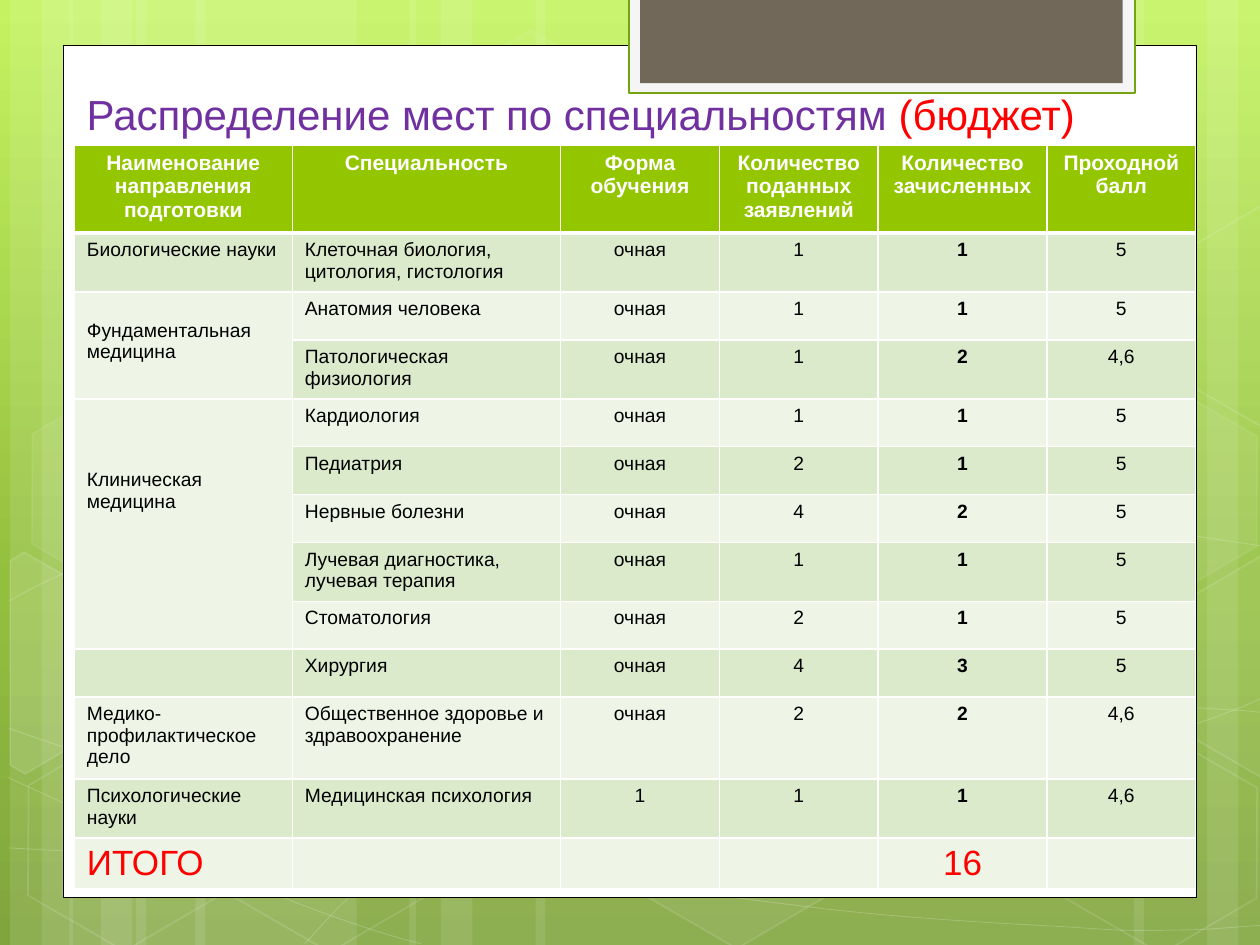
from copy import deepcopy
from dataclasses import dataclass
from math import cos, radians, sin
from typing import NamedTuple, Optional

from lxml.etree import SubElement
from pptx import Presentation
from pptx.dml.color import RGBColor
from pptx.enum.shapes import MSO_SHAPE
from pptx.enum.text import MSO_ANCHOR, PP_ALIGN
from pptx.oxml.ns import qn
from pptx.util import Inches, Pt


@dataclass(frozen=True)
class Theme:
    font: str = "Arial"
    white: str = "FFFFFF"
    black: str = "000000"
    red: str = "FF0000"
    purple: str = "7030A0"
    header: str = "94C600"
    bands: tuple = ("EEF5E7", "DCEACC")
    tab_light: str = "F5F5F5"
    tab_line: str = "74A510"
    tab_dark: str = "71685A"
    backdrop: tuple = ((0, "C3F35F"), (0.62, "93BF3F"), (1, "81A53E"))
    title_size: int = 24
    header_size: int = 12
    body_size: int = 11
    total_size: int = 20


class Style(NamedTuple):
    fill: Optional[str] = None
    fill_alpha: int = 100
    line: Optional[str] = None
    width: float = 1
    line_alpha: int = 100


class Hexagon(NamedTuple):
    x: float
    y: float
    fill_alpha: int
    line_alpha: int


class CutHexagon(NamedTuple):
    """A hexagon cut off by the slide edge, as it stands on the slide."""
    cx: float
    cy: float
    points: list
    fill_alpha: int


class Row(NamedTuple):
    field: str
    specialty: str
    form: str
    applied: str
    enrolled: str
    score: str
    height: float
    span: int = 1
    top: float = 0.05


T = Theme()
TILT = 30
STRIPES = [(1.08, 1.75), (0.08, 0.5), (0.33, 0.83), (1.55, 1.75), (0.55, 0.5), (0.8, 0.83),
           (7.33, 1.75), (9.58, 0.5), (9, 0.83), (4.25, 3.08), (3.25, 0.5), (3.5, 0.83)]
# Each curve is a start point followed by three points per Bezier segment.
CURVES = [
    [(0.07, 6.73), (0.61, 6.76), (1.15, 6.79), (1.9, 6.78), (2.65, 6.77), (3.58, 6.75), (4.58, 6.65),
     (5.58, 6.55), (7, 6.36), (7.92, 6.17), (8.83, 5.98), (9.77, 5.68), (10.07, 5.51)],
    [(0.07, 4.77), (0.36, 4.61), (0.65, 4.46), (1.21, 4.31), (1.78, 4.16), (2.59, 3.94), (3.47, 3.87),
     (4.36, 3.8), (5.44, 3.79), (6.54, 3.87), (7.64, 3.95), (9.47, 4.26), (10.07, 4.34)],
    [(0.06, 6.17), (1.27, 6.72), (2.47, 7.27), (3.34, 7.49)],
    [(0.07, 5.78), (0.38, 5.89), (0.7, 6), (1.28, 6.16), (1.86, 6.31), (2.73, 6.56), (3.57, 6.73),
     (4.4, 6.9), (5.45, 7.08), (6.28, 7.18), (7.11, 7.29), (8, 7.33), (8.53, 7.36),
     (9.05, 7.4), (9.19, 7.38), (9.45, 7.38), (9.71, 7.37), (9.89, 7.35), (10.07, 7.34)],
    [(2.42, 7.49), (2.6, 7.29), (2.78, 7.09), (3.02, 6.91), (3.26, 6.73), (3.6, 6.53), (3.88, 6.39),
     (4.16, 6.25), (4.33, 6.19), (4.7, 6.09), (5.06, 5.99), (5.73, 5.85), (6.08, 5.78),
     (6.44, 5.71), (6.49, 5.71), (6.8, 5.69), (7.11, 5.66), (7.6, 5.63), (7.94, 5.62),
     (8.29, 5.61), (8.86, 5.62), (8.86, 5.62), (8.86, 5.62), (9.53, 5.62), (9.53, 5.62),
     (9.71, 5.63), (9.88, 5.64), (9.97, 5.65), (10.06, 5.66), (10.03, 5.65), (10.06, 5.66)],
]
HEXAGONS = [Hexagon(3.34, 0.36, 4, 8), Hexagon(4.97, 5.89, 6, 12), Hexagon(0.11, 5.91, 0, 12),
            Hexagon(0.14, 3.12, 7, 8), Hexagon(1.74, 5.92, 0, 12), Hexagon(7.53, 4.53, 10, 12),
            Hexagon(8.34, 5.93, 0, 12), Hexagon(8.34, 3.14, 7, 8)]
CUT_HEXAGONS = [
    CutHexagon(0.36, 5.35, [(0.08, 4.45), (0.19, 4.38), (0.96, 4.82), (0.95, 5.7), (0.2, 6.14), (0.08, 6.07)], 10),
    CutHexagon(9.85, 5.2, [(9.26, 4.85), (10.01, 4.41), (10.09, 4.46), (10.09, 6.13), (10.02, 6.17), (9.26, 5.73)], 4),
    CutHexagon(9.85, 2.41, [(9.26, 2.07), (10.01, 1.63), (10.1, 1.68), (10.09, 3.35), (10.02, 3.39), (9.26, 2.95)], 0),
]
COLUMNS = [1.73, 2.13, 1.26, 1.26, 1.34, 1.18]
ENROLLED = 4
ROWS = [
    Row("Наименование направления подготовки", "Специальность", "Форма обучения",
        "Количество\nподанных заявлений", "Количество зачисленных", "Проходной балл", 0.69),
    Row("Биологические науки", "Клеточная биология, цитология, гистология", "очная", "1", "1", "5", 0.46),
    Row("Фундаментальная медицина", "Анатомия человека", "очная", "1", "1", "5", 0.38, 2, 0.22),
    Row("", "Патологическая физиология", "очная", "1", "2", "4,6", 0.46),
    Row("Клиническая медицина", "Кардиология", "очная", "1", "1", "5", 0.38, 5, 0.56),
    Row("", "Педиатрия", "очная", "2", "1", "5", 0.38),
    Row("", "Нервные болезни", "очная", "4", "2", "5", 0.38),
    Row("", "Лучевая диагностика, лучевая терапия", "очная", "1", "1", "5", 0.46),
    Row("", "Стоматология", "очная", "2", "1", "5", 0.38),
    Row("", "Хирургия", "очная", "4", "3", "5", 0.38),
    Row("Медико-профилактическое дело", "Общественное здоровье и здравоохранение", "очная", "2", "2", "4,6", 0.64),
    Row("Психологические науки", "Медицинская психология", "1", "1", "1", "4,6", 0.46),
    Row("ИТОГО", "", "", "", "16", "", 0.39),
]


def paint(sp, style: Style) -> None:
    sp.shadow.inherit = False
    for fill, color, alpha, tag in ((sp.fill, style.fill, style.fill_alpha, "a:solidFill"),
                                    (sp.line.fill, style.line, style.line_alpha, "a:ln/a:solidFill")):
        if not color or not alpha:
            fill.background()
            continue
        fill.solid()
        fill.fore_color.rgb = RGBColor.from_string(color)
        if alpha < 100:
            steps = "/".join(qn(t) for t in (tag + "/a:srgbClr").split("/"))
            SubElement(sp.element.spPr.find(steps), qn("a:alpha"), val=str(alpha * 1000))
    if style.line:
        sp.line.width = Pt(style.width)


def add_preset(s, kind, x: float, y: float, w: float, h: float, style: Style):
    sp = s.shapes.add_shape(kind, Inches(x), Inches(y), Inches(w), Inches(h))
    paint(sp, style)
    return sp


def add_outline(s, points: list, closed: bool, style: Style):
    start, *rest = [(Inches(x), Inches(y)) for x, y in points]
    builder = s.shapes.build_freeform(*start)
    builder.add_line_segments(rest, close=closed)
    sp = builder.convert_to_shape()
    paint(sp, style)
    return sp


def bend(sp) -> None:
    """Join each three line segments into one Bezier segment."""
    lines = list(sp.element.iter(qn("a:lnTo")))
    for i in range(0, len(lines), 3):
        curve = SubElement(lines[i].getparent(), qn("a:cubicBezTo"))
        for line in lines[i:i + 3]:
            curve.append(line[0])
            line.getparent().remove(line)


def untilt(cut: CutHexagon) -> list:
    """Turn the points back, so that the shape's own rotation restores them."""
    c, n = cos(radians(TILT)), sin(radians(TILT))
    return [(cut.cx + (x - cut.cx) * c + (y - cut.cy) * n,
             cut.cy - (x - cut.cx) * n + (y - cut.cy) * c) for x, y in cut.points]


def format_run(r, size: float, color: str, bold: bool = False) -> None:
    r.font.name, r.font.size, r.font.bold = T.font, Pt(size), bold
    r.font.color.rgb = RGBColor.from_string(color)


def add_backdrop(s) -> None:
    fill = s.background.fill
    fill.gradient()
    fill.gradient_angle = 270
    stops = s.element.find(".//" + qn("a:gsLst"))
    stops.insert(1, deepcopy(stops[0]))
    for stop, (position, color) in zip(fill.gradient_stops, T.backdrop):
        stop.position = position
        stop.color.rgb = RGBColor.from_string(color)
    for x, w in STRIPES:
        add_preset(s, MSO_SHAPE.RECTANGLE, x, 0, w, 7.5, Style(T.white, 10))
    for knots in CURVES:
        bend(add_outline(s, knots, False, Style(line=T.white, width=0.5, line_alpha=20)))
    for h in HEXAGONS:
        sp = add_preset(s, MSO_SHAPE.HEXAGON, h.x, h.y, 1.75, 1.52,
                        Style(T.white, h.fill_alpha, T.white, 1, h.line_alpha))
        sp.adjustments[0] = 0.285
        sp.rotation = TILT
    for cut in CUT_HEXAGONS:
        sp = add_outline(s, untilt(cut), True, Style(T.white, cut.fill_alpha, T.white, 1, 12))
        sp.rotation = TILT


def add_title(s) -> None:
    tf = s.shapes.add_textbox(Inches(0.28), Inches(0.52), Inches(8.66), Inches(0.63)).text_frame
    tf.word_wrap = True
    tf.vertical_anchor = MSO_ANCHOR.BOTTOM
    p = tf.paragraphs[0]
    p.alignment = PP_ALIGN.CENTER
    for text, color in (("Распределение мест по специальностям ", T.purple), ("(бюджет)", T.red)):
        r = p.add_run()
        r.text = text
        format_run(r, T.title_size, color)


def add_borders(cell, top: float, bottom: float) -> None:
    tc_pr = cell._tc.get_or_add_tcPr()
    for tag, width in (("a:lnL", 1), ("a:lnR", 1), ("a:lnT", top), ("a:lnB", bottom)):
        ln = SubElement(tc_pr, qn(tag), w=str(Pt(width)))
        SubElement(SubElement(ln, qn("a:solidFill")), qn("a:srgbClr"), val=T.white)


def add_places_table(s) -> None:
    table = s.shapes.add_table(len(ROWS), len(COLUMNS), Inches(0.59), Inches(1.15),
                               Inches(sum(COLUMNS)), Inches(sum(row.height for row in ROWS))).table
    for column, width in zip(table.columns, COLUMNS):
        column.width = Inches(width)
    for i, row in enumerate(ROWS):
        table.rows[i].height = Inches(row.height)
        head, total = i == 0, i == len(ROWS) - 1
        size = T.header_size if head else T.total_size if total else T.body_size
        color = T.white if head else T.red if total else T.black
        for j, text in enumerate(row[:len(COLUMNS)]):
            cell = table.cell(i, j)
            add_borders(cell, 3 if i == 1 else 1, 3 if head else 1)
            cell.fill.solid()
            cell.fill.fore_color.rgb = RGBColor.from_string(T.header if head else T.bands[i % 2])
            if total:
                cell.margin_bottom = Inches(0.02)
            cell.text_frame.text = text
            for p in cell.text_frame.paragraphs:
                p.alignment = PP_ALIGN.CENTER if head or j > 1 else PP_ALIGN.LEFT
                for r in p.runs:
                    format_run(r, size, color, head or (j == ENROLLED and not total))
                if not text:
                    p._p.get_or_add_endParaRPr().set("sz", str(T.body_size * 100))
        table.cell(i, 0).margin_top = Inches(row.top)
        if row.span > 1:
            table.cell(i, 0).merge(table.cell(i + row.span - 1, 0))


def main() -> None:
    prs = Presentation()
    prs.slide_width, prs.slide_height = Inches(10), Inches(7.5)
    s = prs.slides.add_slide(prs.slide_layouts[6])
    add_backdrop(s)
    add_preset(s, MSO_SHAPE.RECTANGLE, 0.5, 0.36, 9, 6.76, Style(T.white, line=T.black, width=0.5))
    add_preset(s, MSO_SHAPE.RECTANGLE, 4.99, -0.02, 4.02, 0.76, Style(T.tab_light, line=T.tab_line, width=1.25))
    add_preset(s, MSO_SHAPE.RECTANGLE, 5.08, -0.02, 3.83, 0.68, Style(T.tab_dark))
    add_title(s)
    add_places_table(s)
    prs.save("out.pptx")


if __name__ == "__main__":
    main()
